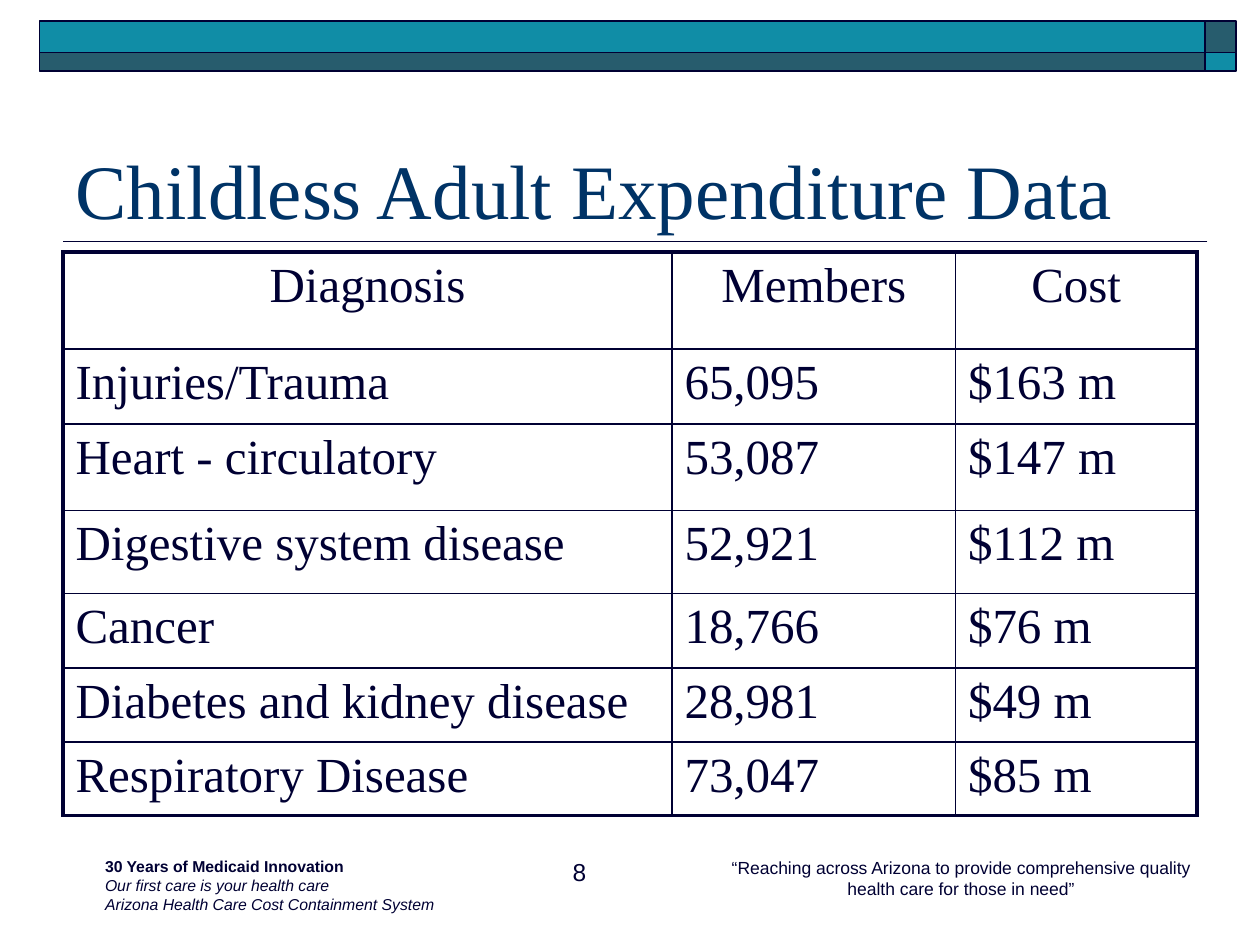
import pptx
import pptx.dml.color
import pptx.enum.shapes
import pptx.enum.text
import pptx.oxml
import pptx.oxml.ns
import pptx.util

Align = pptx.enum.text.PP_ALIGN
Anchor = pptx.enum.text.MSO_ANCHOR
INK, TEAL, SLATE, NAVY = "000033", "108DA6", "275C6D", "003366"
SERIF, SANS = "Times New Roman", "Arial"
THIN, THICK = 1, 2.25


def color(value):
    return pptx.dml.color.RGBColor.from_string(value)


def grid(units):
    """Turn grid columns or rows, twelve to the inch, into a length."""
    return pptx.util.Inches(units / 12)


def write(frame, lines, font=SANS, size=10, ink=INK, align=Align.LEFT, anchor=Anchor.TOP):
    """Fill a text frame; each line is a string or a (string, font flags) pair."""
    frame.word_wrap = True
    frame.vertical_anchor = anchor
    for index, line in enumerate(lines):
        text, flags = (line, {}) if isinstance(line, str) else line
        paragraph = frame.paragraphs[0] if index == 0 else frame.add_paragraph()
        paragraph.alignment = align
        run = paragraph.add_run()
        run.text = text
        run.font.name, run.font.size = font, pptx.util.Pt(size)
        run.font.color.rgb = color(ink)
        run.font.bold = flags.get("bold", False)
        run.font.italic = flags.get("italic", False)


class Deck:
    def __init__(self):
        self.presentation = pptx.Presentation()
        self.presentation.slide_width = grid(120)
        self.presentation.slide_height = grid(90)
        self.slide = self.presentation.slides.add_slide(self.presentation.slide_layouts[5])

    def title(self, text, *box):
        shape = self.slide.shapes.title
        shape.left, shape.top, shape.width, shape.height = map(grid, box)
        write(shape.text_frame, [text], font=SERIF, size=44, ink=NAVY, anchor=Anchor.BOTTOM)

    def block(self, fill, *box):
        shape = self.slide.shapes.add_shape(
            pptx.enum.shapes.MSO_SHAPE.RECTANGLE, *map(grid, box))
        shape.shadow.inherit = False
        shape.fill.solid()
        shape.fill.fore_color.rgb = color(fill)
        shape.line.color.rgb = color(INK)
        shape.line.width = pptx.util.Pt(THIN)

    def rule(self, *ends):
        connector = self.slide.shapes.add_connector(
            pptx.enum.shapes.MSO_CONNECTOR.STRAIGHT, *map(grid, ends))
        connector.line.color.rgb = color(INK)
        connector.line.width = pptx.util.Pt(THIN)
        properties = connector._element.spPr
        properties.append(pptx.oxml.parse_xml(
            f'<a:effectLst {pptx.oxml.ns.nsdecls("a")}/>'))

    def text(self, lines, *box, indent=1.2, **style):
        frame = self.slide.shapes.add_textbox(*map(grid, box)).text_frame
        frame.margin_left = grid(indent)
        write(frame, lines, **style)

    def table(self, records, left, top, columns, rows):
        table = self.slide.shapes.add_table(
            len(rows), len(columns), grid(left), grid(top),
            grid(sum(columns)), grid(sum(rows))).table
        table.first_row = table.horz_banding = False
        for column, width in zip(table.columns, columns):
            column.width = grid(width)
        for row, height in zip(table.rows, rows):
            row.height = grid(height)
        for r, record in enumerate(records):
            for c, value in enumerate(record):
                cell = table.cell(r, c)
                write(cell.text_frame, [value], font=SERIF, size=28,
                      align=Align.CENTER if r == 0 else Align.LEFT)
                outer = {"L": c == 0, "R": c == len(columns) - 1,
                         "T": r == 0, "B": r == len(rows) - 1}
                for side, is_outer in outer.items():
                    self.border(cell, side, THICK if is_outer else THIN)
                cell.fill.background()

    def border(self, cell, side, width):
        cell._tc.get_or_add_tcPr().append(pptx.oxml.parse_xml(
            f'<a:ln{side} {pptx.oxml.ns.nsdecls("a")} w="{pptx.util.Pt(width)}">'
            f'<a:solidFill><a:srgbClr val="{INK}"/></a:solidFill></a:ln{side}>'))


def main():
    deck = Deck()
    deck.rule(115, 23, 6, 23)
    band_left, band_width, corner_width = 3.75, 111, 3
    for top, height, band, corner in ((2, 3, TEAL, SLATE), (5, 1.8, SLATE, TEAL)):
        deck.block(band, band_left, top, band_width, height)
        deck.block(corner, band_left + band_width, top, corner_width, height)

    deck.title("Childless Adult Expenditure Data", 6, 8, 108, 15)
    deck.table(
        [("Diagnosis", "Members", "Cost"),
         ("Injuries/Trauma", "65,095", "$163 m"),
         ("Heart - circulatory", "53,087", "$147 m"),
         ("Digestive system disease", "52,921", "$112 m"),
         ("Cancer", "18,766", "$76 m"),
         ("Diabetes and kidney disease", "28,981", "$49 m"),
         ("Respiratory Disease", "73,047", "$85 m")],
        6, 24, columns=(58, 27, 23), rows=(9.25, 7.15, 8.25, 7.9, 7.1, 7.05, 7))

    footer_top = 81
    deck.text(["“Reaching across Arizona to provide comprehensive quality "
               "health care for those in need”"],
              67, footer_top, 49, 5.2, align=Align.CENTER)
    deck.text(["8"], 29, footer_top, 28, 6.25, size=14, align=Align.RIGHT)
    deck.text([("30 Years of Medicaid Innovation", {"bold": True}),
               ("Our first care is your health care", {"italic": True}),
               ("Arizona Health Care Cost Containment System", {"italic": True})],
              3, footer_top, 112, 6.25, indent=7, size=9)
    deck.presentation.save("out.pptx")


if __name__ == "__main__":
    main()
